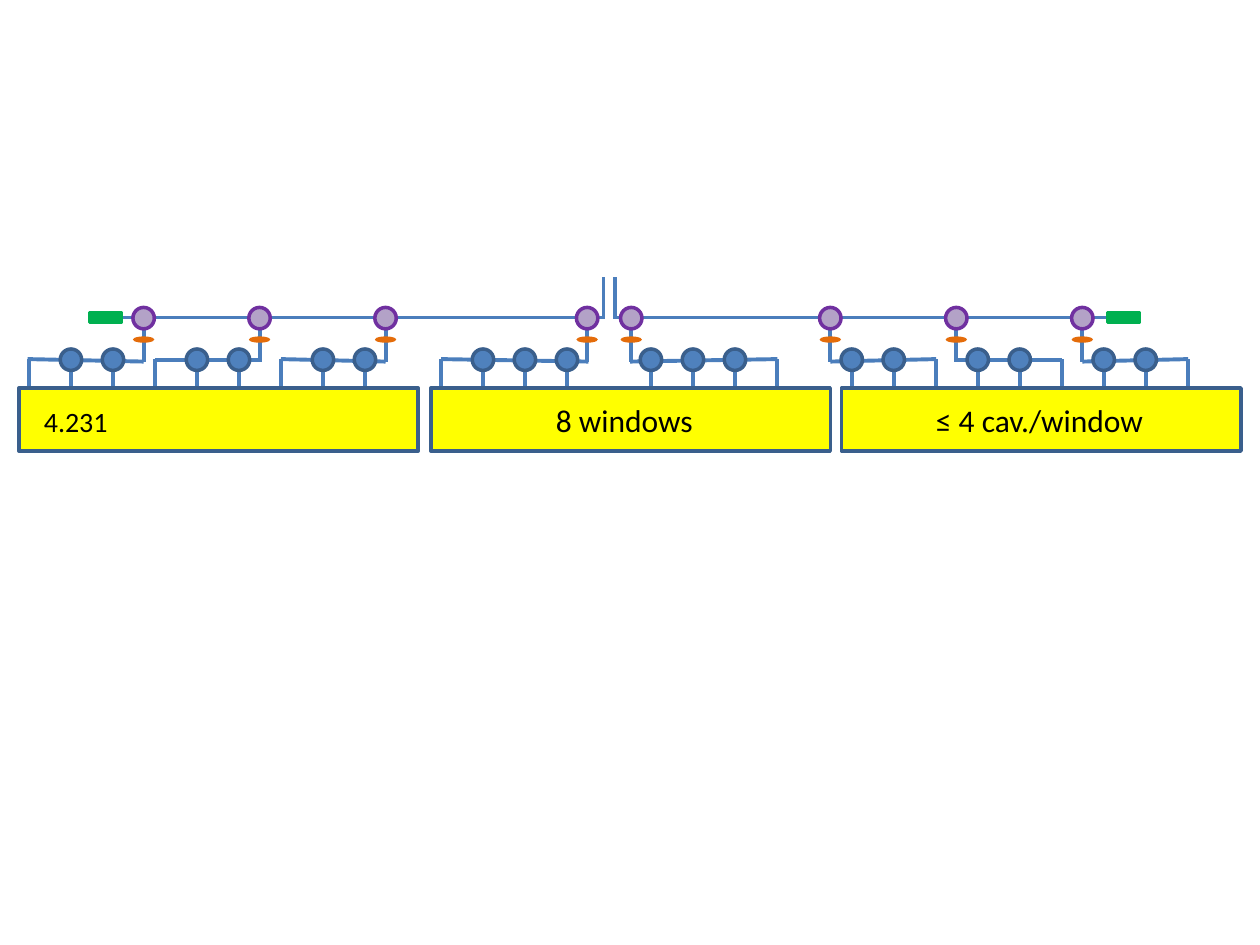
from dataclasses import dataclass

from lxml import etree
from pptx import Presentation
from pptx.dml.color import RGBColor
from pptx.enum import shapes, text
from pptx.oxml.ns import qn
from pptx.util import Inches, Pt


@dataclass(frozen=True)
class Theme:
    font: str = "Calibri"
    ink: str = "000000"
    waveguide: str = "4B7EBC"
    outline: str = "3A5F8C"
    module: str = "FFFF00"
    cavity: str = "4F81BD"
    load: str = "00B050"
    window: str = "E46C0A"
    coupler: str = "B3A2C7"
    coupler_edge: str = "7030A0"
    label_size: int = 18
    small_size: int = 16
    guide_width: float = 2.25
    edge_width: float = 2


theme = Theme()
prs = Presentation()
prs.slide_width, prs.slide_height = Inches(10), Inches(7.5)
slide = prs.slides.add_slide(prs.slide_layouts[6])


def add_waveguide(x1, y1, x2, y2):
    guide = slide.shapes.add_connector(
        shapes.MSO_CONNECTOR.STRAIGHT, Inches(x1), Inches(y1), Inches(x2), Inches(y2))
    guide.line.color.rgb = RGBColor.from_string(theme.waveguide)
    guide.line.width = Pt(theme.guide_width)
    etree.SubElement(guide._element.spPr, qn("a:effectLst"))


def add_label(words, left, top, width, height, size=theme.label_size,
              align=text.PP_ALIGN.LEFT):
    label = slide.shapes.add_textbox(
        Inches(left), Inches(top), Inches(width), Inches(height))
    frame = label.text_frame
    frame.word_wrap = True
    frame.auto_size = text.MSO_AUTO_SIZE.SHAPE_TO_FIT_TEXT
    paragraph = frame.paragraphs[0]
    paragraph.text = words
    paragraph.alignment = align
    paragraph.font.name = theme.font
    paragraph.font.size = Pt(size)
    paragraph.font.color.rgb = RGBColor.from_string(theme.ink)


# Each module: left edge, first feed, feed slots in use, slots with a cavity
pitch = 1 / 3
modules = [
    (0.15, 0.23, range(9), (1, 2, 4, 5, 7, 8)),
    (3.42, 3.5, (0, 1, 2, 3, 5, 6, 7, 8), (1, 2, 3, 5, 6, 7)),
    (6.68, 6.76, range(9), (0, 1, 3, 4, 6, 7)),
]
branches = [1.14, 2.06, 3.06, 4.66, 5.01, 6.59, 7.59, 8.59]
manifolds = [
    (0.22, 2.85, 1.14, 2.87), (1.23, 2.86, 2.06, 2.86), (2.23, 2.85, 3.06, 2.87),
    (3.5, 2.85, 4.67, 2.87), (5, 2.87, 6.17, 2.85),
    (6.59, 2.87, 7.43, 2.85), (7.59, 2.86, 8.43, 2.86), (8.59, 2.87, 9.43, 2.85),
]

# Waveguides: two main runs with their inlets, then feeds, manifolds and branches
main_y = 2.52
for inlet_x, load_x in [(4.79, 0.8), (4.88, 9.04)]:
    add_waveguide(load_x, main_y, inlet_x, main_y)
    add_waveguide(inlet_x, 2.2, inlet_x, 2.53)
for _, first_feed, feed_slots, _ in modules:
    for slot in feed_slots:
        feed_x = first_feed + slot * pitch
        add_waveguide(feed_x, 2.85, feed_x, 3.19)
for manifold in manifolds:
    add_waveguide(*manifold)
for branch_x in branches:
    add_waveguide(branch_x, 2.53, branch_x, 2.87)

# Components: preset, centre, size, fill, edge
rect, oval = shapes.MSO_SHAPE.RECTANGLE, shapes.MSO_SHAPE.OVAL
components = []
for module_left, first_feed, _, cavity_slots in modules:
    components.append(
        (rect, module_left + 3.17 / 2, 3.33, 3.17, 0.5, theme.module, theme.outline))
    components += [
        (oval, first_feed + slot * pitch, 2.855, 0.17, 0.17, theme.cavity, theme.outline)
        for slot in cavity_slots]
for load_x in (0.835, 8.915):
    components.append((rect, load_x, main_y, 0.25, 0.08, theme.load, theme.load))
for branch_x in branches:
    components += [
        (oval, branch_x, 2.695, 0.17, 0.05, theme.window, None),
        (oval, branch_x, 2.525, 0.17, 0.17, theme.coupler, theme.coupler_edge)]

for preset, centre_x, centre_y, width, height, fill, edge in components:
    component = slide.shapes.add_shape(
        preset, Inches(centre_x - width / 2), Inches(centre_y - height / 2),
        Inches(width), Inches(height))
    component.shadow.inherit = False
    component.fill.solid()
    component.fill.fore_color.rgb = RGBColor.from_string(fill)
    if edge:
        component.line.color.rgb = RGBColor.from_string(edge)
        component.line.width = Pt(theme.edge_width)
    else:
        component.line.fill.background()

add_label("8 windows", 3.83, 3.13, 2.25, 0.4, align=text.PP_ALIGN.CENTER)
add_label("4.231", 0.25, 3.16, 0.92, 0.37, size=theme.small_size)
add_label("≤ 4 cav./window", 7.33, 3.13, 1.92, 0.4)

prs.save("out.pptx")
